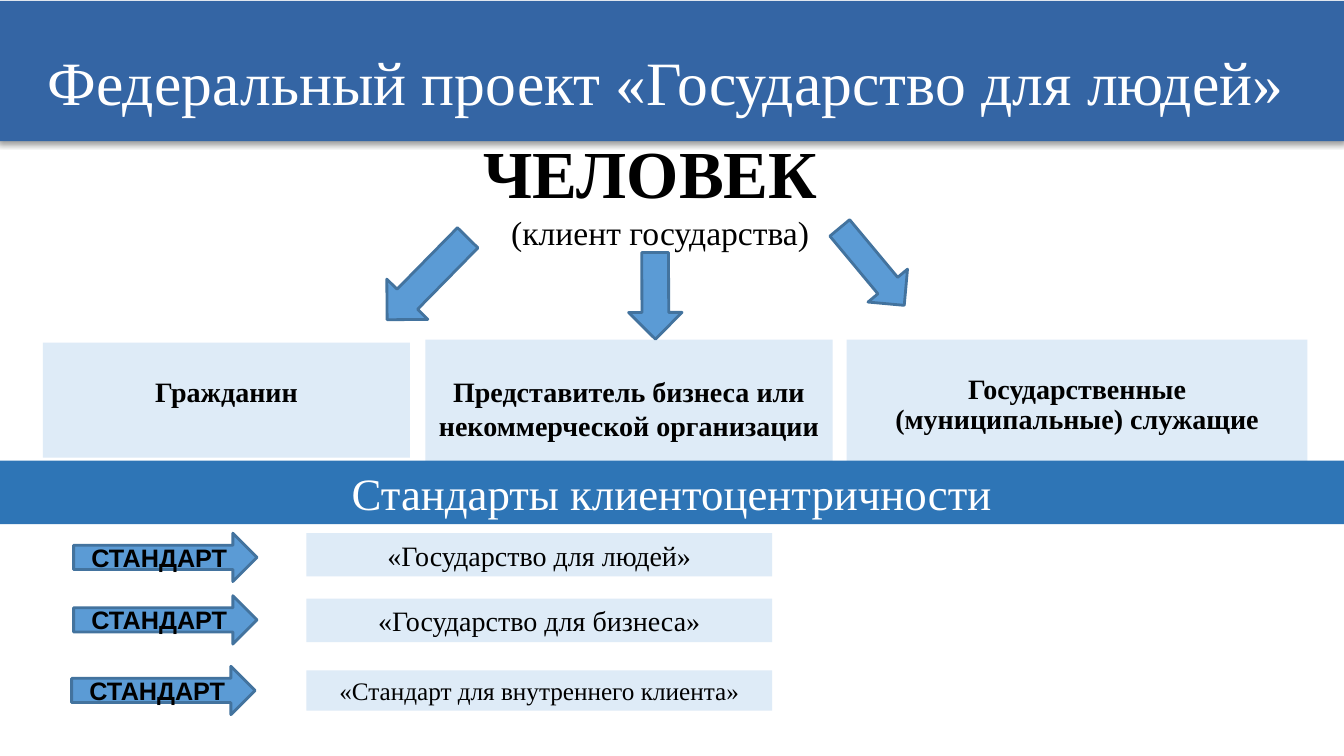
from lxml.etree import SubElement
from pptx import Presentation
from pptx.dml.color import RGBColor
from pptx.enum.shapes import MSO_SHAPE
from pptx.enum.text import MSO_ANCHOR, PP_ALIGN
from pptx.oxml.ns import qn
from pptx.util import Inches, Pt

PALE, ARROW, OUTLINE = "DEEBF7", "5B9BD5", "43739E"
BLACK, WHITE = "000000", "FFFFFF"
SERIF = "Times New Roman"

deck = Presentation()
deck.slide_width, deck.slide_height = Inches(13.33), Inches(7.5)
slide = deck.slides.add_slide(deck.slide_layouts[6])

# Grid: 100 columns by 100 rows
COL, ROW = deck.slide_width / 100, deck.slide_height / 100


def block(kind, left, top, width, height, fill, outline=None):
    shape = slide.shapes.add_shape(kind, int(left * COL), int(top * ROW),
                                   int(width * COL), int(height * ROW))
    shape.shadow.inherit = False
    shape.fill.solid()
    shape.fill.fore_color.rgb = RGBColor.from_string(fill)
    if outline:
        shape.line.color.rgb = RGBColor.from_string(outline)
        shape.line.width = Pt(2)
    else:
        shape.line.fill.background()
    return shape


def write(shape, lines, color=BLACK, font=SERIF, top=0.05, spacing=None,
          anchor=MSO_ANCHOR.TOP):
    frame = shape.text_frame
    frame.word_wrap = True
    frame.vertical_anchor = anchor
    frame.margin_top = Inches(top)
    for number, (words, size, bold, align) in enumerate(lines):
        paragraph = frame.add_paragraph() if number else frame.paragraphs[0]
        paragraph.alignment = align
        if spacing:
            paragraph.line_spacing = spacing
        run = paragraph.add_run()
        run.text = words
        run.font.name, run.font.size, run.font.bold = font, Pt(size), bold
        run.font.color.rgb = RGBColor.from_string(color)


# Client groups
groups = [
    (3.2, 45.33, 27.3, 15.2, 0.9, ["Гражданин"]),
    (63, 44.93, 34.28, 17.33, 0.9,
     ["Государственные", "(муниципальные) служащие"]),
    (31.65, 44.93, 30.3, 18.67, None,
     ["Представитель бизнеса или некоммерческой организации"]),
]
for left, top, width, height, spacing, names in groups:
    group = block(MSO_SHAPE.RECTANGLE, left, top, width, height, PALE)
    write(group, [(name, 20, True, PP_ALIGN.CENTER) for name in names],
          top=0.35, spacing=spacing)

# The person at the centre
person = slide.shapes.add_textbox(int(35.25 * COL), int(16.67 * ROW),
                                  int(27.75 * COL), int(11.2 * ROW))
write(person, [("ЧЕЛОВЕК", 48, True, PP_ALIGN.LEFT),
               ("(клиент государства)", 24, False, PP_ALIGN.CENTER)])

# Title bar with a soft shadow
title = block(MSO_SHAPE.RECTANGLE, 0, 0.13, 100.35, 18.53, "3465A4")
title.text_frame.margin_right = Inches(0.26)
write(title, [("Федеральный проект «Государство для людей»", 44, False,
               PP_ALIGN.CENTER)], color=WHITE, top=0.43)
effects = title.element.spPr.find(qn("a:effectLst"))
shadow = SubElement(effects, qn("a:outerShdw"), blurRad=str(Pt(4)),
                    dist=str(Pt(3)), dir=str(135 * 60000), rotWithShape="0")
shade = SubElement(shadow, qn("a:srgbClr"), val=BLACK)
SubElement(shade, qn("a:alpha"), val="40000")

# Arrows from the person to each group
for left, top, width, height, angle in [(61.13, 31.87, 7.5, 6.8, 50.2),
                                        (27.53, 33.07, 8.55, 7.6, 134.5),
                                        (45.53, 35.6, 6.45, 7.07, 89.8)]:
    pointer = block(MSO_SHAPE.RIGHT_ARROW, left, top, width, height,
                    ARROW, OUTLINE)
    pointer.rotation = angle

# Heading of the standards
heading = block(MSO_SHAPE.RECTANGLE, 0, 60.93, 100, 8.4, "2E75B6")
write(heading, [("Стандарты клиентоцентричности", 32, False,
                 PP_ALIGN.CENTER)], color=WHITE)

# Standards: arrow and name in each row
standards = [
    (5.48, 70.53, 70.53, 5.73, "«Государство для людей»", 20),
    (5.48, 78.8, 79.2, 5.73, "«Государство для бизнеса»", 20),
    (5.33, 88.13, 88.67, 5.33, "«Стандарт для внутреннего клиента»", 18),
]
for left, arrow_top, name_top, name_height, name, size in standards:
    marker = block(MSO_SHAPE.RIGHT_ARROW, left, arrow_top, 13.65, 6.4,
                   ARROW, OUTLINE)
    write(marker, [("СТАНДАРТ", 18, True, PP_ALIGN.CENTER)], font="Arial",
          anchor=MSO_ANCHOR.MIDDLE)
    standard = block(MSO_SHAPE.RECTANGLE, 22.8, name_top, 34.65, name_height,
                     PALE)
    write(standard, [(name, size, False, PP_ALIGN.CENTER)])

deck.save("out.pptx")
